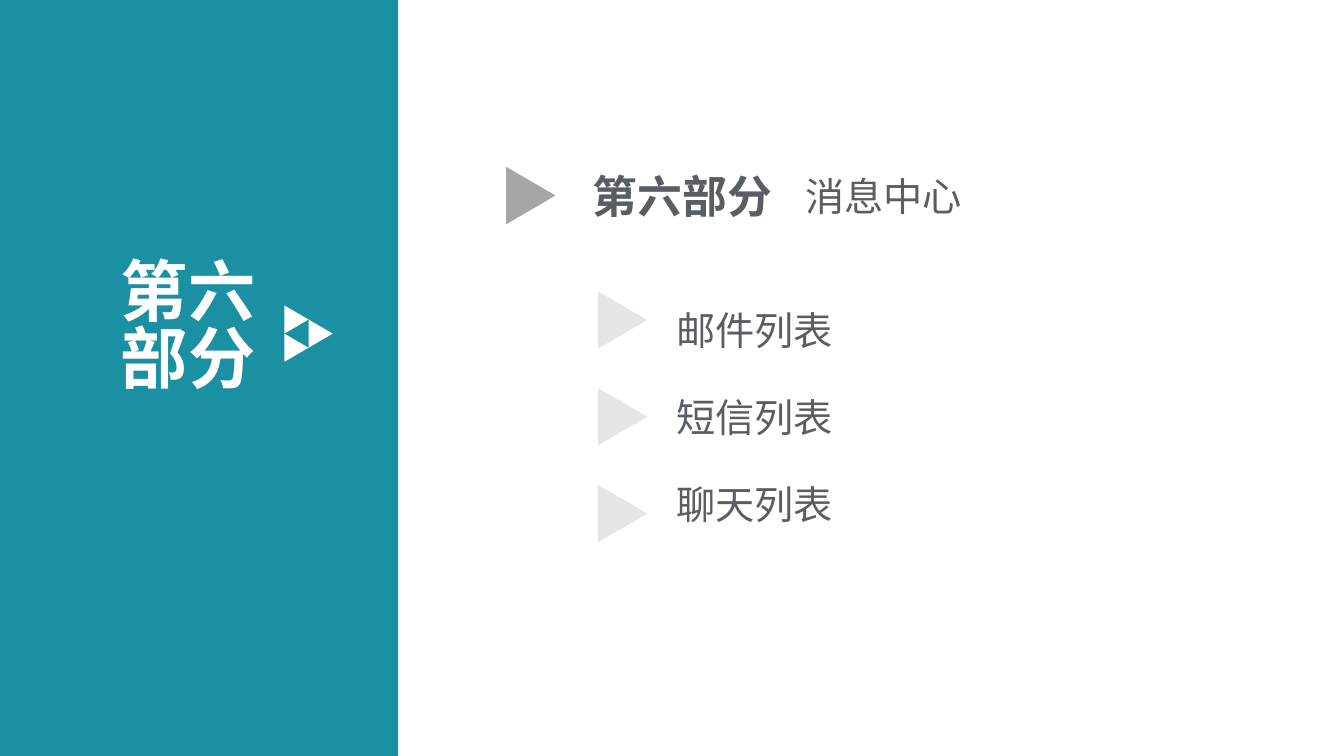
from pptx import Presentation
from pptx.dml.color import RGBColor
from pptx.enum.shapes import MSO_SHAPE
from pptx.enum.text import MSO_ANCHOR, MSO_AUTO_SIZE, PP_ALIGN
from pptx.util import Inches, Pt
from lxml.etree import SubElement
from pptx.oxml.ns import qn

FONT = "Noto Sans CJK SC"
COLORS = {
    "teal": "1B90A2",
    "white": "FFFFFF",
    "text": "595E64",
    "marker": "A6A6A6",
    "item_marker": "E7E6E6",
}
MARKER_WIDTH, MARKER_HEIGHT = 0.49, 0.57
ITEM_PITCH = 0.96


def place(shape, left, top, width, height):
    shape.left, shape.top = Inches(left), Inches(top)
    shape.width, shape.height = Inches(width), Inches(height)


def add_filled(page, kind, left, top, width, height, color):
    shape = page.shapes.add_shape(
        kind, Inches(left), Inches(top), Inches(width), Inches(height))
    shape.shadow.inherit = False
    shape.fill.solid()
    shape.fill.fore_color.rgb = RGBColor.from_string(COLORS[color])
    shape.line.fill.background()
    return shape


def add_pointer(page, left, middle, width, height, color):
    pointer = add_filled(
        page, MSO_SHAPE.ISOSCELES_TRIANGLE,
        left + (width - height) / 2, middle - width / 2, height, width, color)
    pointer.rotation = 90


def write(box, lines, size, color, bold=False, spacing=1.0, gap=0):
    frame = box.text_frame
    frame.text = "\n".join(lines)
    frame.word_wrap = True
    frame.auto_size = MSO_AUTO_SIZE.NONE
    frame.vertical_anchor = MSO_ANCHOR.MIDDLE
    for index, para in enumerate(frame.paragraphs):
        para.alignment = PP_ALIGN.LEFT
        para.line_spacing = spacing
        para.space_before = Pt(gap if index else 0)
        para.space_after = Pt(0)
        font = para.font
        font.size, font.bold, font.name = Pt(size), bold, FONT
        font.color.rgb = RGBColor.from_string(COLORS[color])
        SubElement(font._element if hasattr(font, "_element") else font._rPr,
                   qn("a:ea"), typeface=FONT)


def add_side_panel(page, left, top, width, height):
    panel = add_filled(page, MSO_SHAPE.RECTANGLE, left, top, width, height, "teal")
    tree = page.shapes._spTree
    tree.remove(panel._element)
    tree.insert(2, panel._element)
    title = page.shapes.title
    place(title, left + 1.1, top + 2.41, 1.74, 1.72)
    write(title, ["第六部分"], 48, "white", bold=True, spacing=0.83)
    for column, row in ((0, -1), (0, 1), (1, 0)):
        add_pointer(page, left + 2.82 + column * 0.24,
                    top + 3.31 + row * 0.14, 0.24, 0.28, "white")


def add_heading(page, left, top, height, label, topic):
    add_pointer(page, left, top + height / 2, MARKER_WIDTH, MARKER_HEIGHT, "marker")
    for text, offset, width, size, bold in (
            (label, 0.76, 2.11, 32, True), (topic, 2.87, 4, 28, False)):
        box = page.shapes.add_textbox(
            Inches(left + offset), Inches(top), Inches(width), Inches(height))
        write(box, [text], size, "text", bold=bold)


def add_items(page, left, top, items):
    body = page.placeholders[1]
    row_height = 0.57
    place(body, left + 0.68, top, 4, row_height + ITEM_PITCH * (len(items) - 1))
    write(body, items, 28, "text", gap=28.6)
    for index, para in enumerate(body.text_frame.paragraphs):
        properties = para._p.get_or_add_pPr()
        properties.set("marL", "0")
        properties.set("indent", "0")
        bullet = SubElement(properties, qn("a:buNone"))
        properties.find(qn("a:defRPr")).addprevious(bullet)
        add_pointer(page, left, top + row_height / 2 + index * ITEM_PITCH,
                    MARKER_WIDTH, MARKER_HEIGHT, "item_marker")


def main():
    deck = Presentation()
    deck.slide_width, deck.slide_height = Inches(13.33), Inches(7.5)
    page = deck.slides.add_slide(deck.slide_layouts[1])
    add_side_panel(page, 0, 0, 3.95, 7.5)
    add_heading(page, 5.02, 1.62, 0.64, "第六部分", "消息中心")
    add_items(page, 5.93, 2.89, ["邮件列表", "短信列表", "聊天列表"])
    deck.save("out.pptx")


if __name__ == "__main__":
    main()
